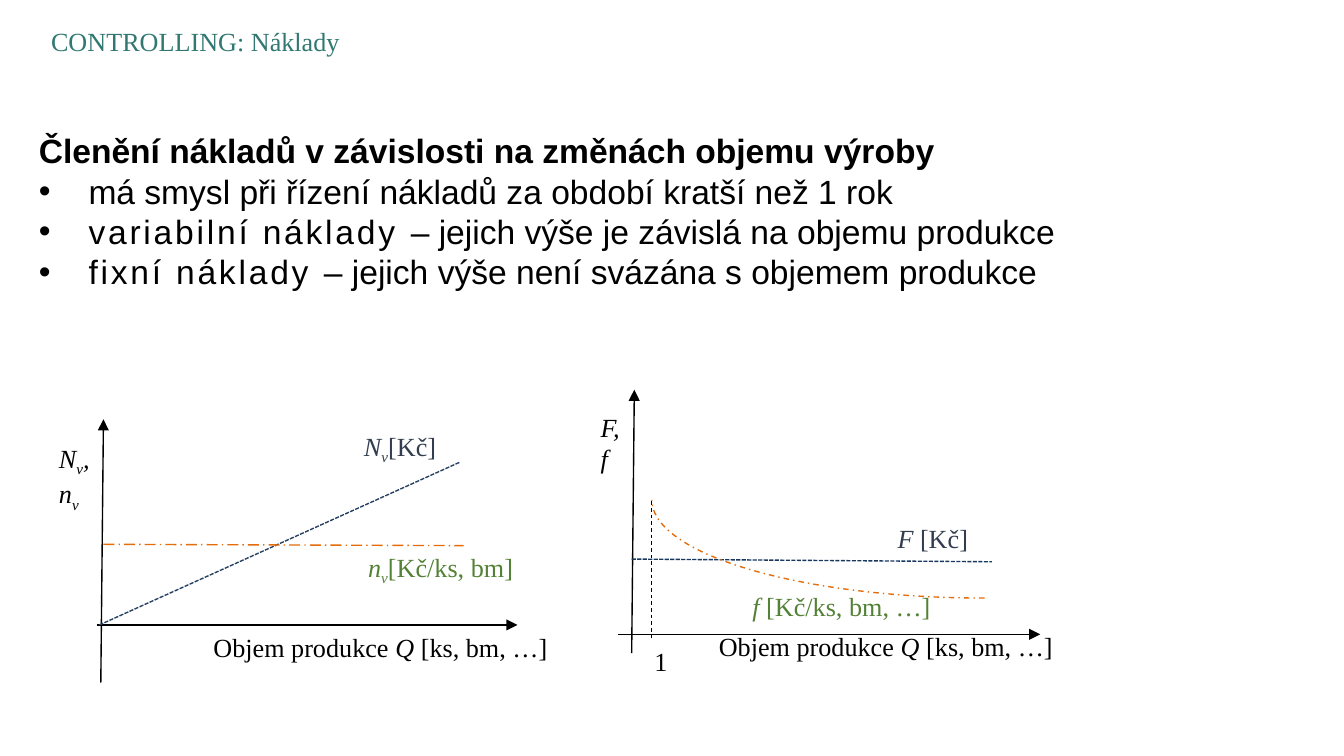
from pptx import Presentation
from pptx.dml.color import RGBColor
from pptx.enum.dml import MSO_LINE
from pptx.enum.shapes import MSO_CONNECTOR, MSO_SHAPE
from pptx.enum.text import MSO_ANCHOR, PP_ALIGN
from pptx.oxml.ns import qn
from pptx.util import Inches, Pt
from lxml.etree import SubElement

WIDE = Inches(10)
HIGH = WIDE * 9 // 16
COL = WIDE / 100  # side of one square grid cell
SERIF, SANS = "Times New Roman", "Arial"
BLACK, TEAL, SLATE, GREEN = "000000", "307871", "323E4F", "538135"
NAVY, BLUE, ORANGE = "254061", "17375E", "E46C0A"
VOLUME = [("Objem produkce", ""), (" Q ", "i"), ("[ks, bm, …]", "")]


def tint(code):
    return RGBColor.from_string(code)


def cells(*nums):
    return [round(n * COL) for n in nums]


def shift(box, x, y):
    return box[0] + x, box[1] + y


def write(para, runs, font=SERIF, size=14, color=BLACK, align=PP_ALIGN.JUSTIFY):
    """Add (text, marks) runs; marks: b bold, i italic, s subscript, w wide."""
    para.alignment = align
    for text, marks in runs:
        run = para.add_run()
        run.text = text
        face = run.font
        face.name, face.size = font, Pt(size)
        face.bold, face.italic = "b" in marks, "i" in marks
        face.color.rgb = tint(color)
        props = run._r.get_or_add_rPr()
        if "s" in marks:
            props.set("baseline", "-25000")
        if "w" in marks:
            props.set("spc", "150")


def label(shapes, spot, size, runs, color=BLACK):
    frame = shapes.add_textbox(*cells(*spot, *size)).text_frame
    frame.word_wrap = True
    write(frame.paragraphs[0], runs, color=color)


def stroke(line, color, width=0.75, dash=None):
    line.color.rgb = tint(color)
    line.width = Pt(width)
    if dash:
        line.dash_style = dash


def rule(shapes, start, end, color=BLACK, width=0.75, dash=None, arrow=False):
    link = shapes.add_connector(MSO_CONNECTOR.STRAIGHT, *cells(*start, *end))
    stroke(link.line, color, width, dash)
    if arrow:
        SubElement(link.line._get_or_add_ln(), qn("a:tailEnd"), type="triangle")
    SubElement(link._element.spPr, qn("a:effectLst"))


def axes(shapes, box, left, right, base, foot):
    """Draw a level axis and a slightly leaning upright one, both with arrows."""
    rule(shapes, shift(box, left, base), shift(box, right, base), arrow=True)
    rule(shapes, shift(box, foot, 19.6), shift(box, foot + 0.2, 0), arrow=True)


def head(slide, box, size):
    title = slide.shapes.title
    title.left, title.top, title.width, title.height = cells(*box, *size)
    frame = title.text_frame
    frame.word_wrap = True
    frame.vertical_anchor = MSO_ANCHOR.TOP
    write(frame.paragraphs[0], [("CONTROLLING: Náklady", "")],
          color=TEAL, align=PP_ALIGN.LEFT)


def points(slide, box, size):
    frame = slide.shapes.add_textbox(*cells(*box, *size)).text_frame
    frame.word_wrap = True
    rows = [
        [("Členění nákladů v závislosti na změnách objemu výroby", "b")],
        [("má smysl při řízení nákladů za období kratší než 1 rok", "")],
        [("variabilní náklady ", "w"),
         ("– jejich výše je závislá na objemu produkce", "")],
        [("fixní náklady ", "w"),
         ("– jejich výše není svázána s objemem produkce", "")],
    ]
    for i, runs in enumerate(rows):
        para = frame.add_paragraph() if i else frame.paragraphs[0]
        para.line_spacing = Pt(21.6)
        if i:
            props = para._p.get_or_add_pPr()
            props.set("marL", str(Inches(0.37)))
            props.set("indent", str(-Inches(0.37)))
            SubElement(props, qn("a:buFont"), typeface=SANS)
            SubElement(props, qn("a:buChar"), char="•")
        write(para, runs, font=SANS, size=18, align=PP_ALIGN.LEFT)


def variable(slide, box):
    """Graph of total and unit variable costs."""
    shapes = slide.shapes.add_group_shape().shapes
    axes(shapes, box, 3.8, 35.1, 15.3, 4.1)
    rule(shapes, shift(box, 4, 15.3), shift(box, 30.8, 3.2), NAVY,
         dash=MSO_LINE.SQUARE_DOT)
    rule(shapes, shift(box, 4.3, 9.3), shift(box, 31.1, 9.4), ORANGE,
         dash=MSO_LINE.LONG_DASH_DOT)
    label(shapes, shift(box, 23, 9.3), (14.2, 4.2),
          [("n", "i"), ("v", "is"), ("[Kč/ks, bm]", "")], GREEN)
    label(shapes, shift(box, 22.7, 0.3), (9.6, 4.2),
          [("N", "i"), ("v", "is"), ("[Kč]", "")], SLATE)
    label(shapes, shift(box, 0, 1.2), (4.6, 7.2),
          [("N", "i"), ("v", "is"), (", n", "i"), ("v", "is")])
    label(shapes, shift(box, 11.5, 15.3), (27.6, 4.2), VOLUME)


def fixed(slide, box):
    """Graph of total and unit fixed costs."""
    shapes = slide.shapes.add_group_shape().shapes
    axes(shapes, box, 2.3, 33.7, 18.2, 3.3)
    rule(shapes, shift(box, 3.3, 12.6), shift(box, 30.1, 12.8), BLUE,
         dash=MSO_LINE.SQUARE_DOT)
    curve = shapes.add_shape(MSO_SHAPE.ARC, *cells(*shift(box, 4.8, 0.9), 49.5, 14.6))
    curve.rotation = 180
    curve.shadow.inherit = False
    curve.fill.background()
    stroke(curve.line, ORANGE, dash=MSO_LINE.DASH_DOT)
    rule(shapes, shift(box, 4.8, 8.3), shift(box, 4.8, 18.6), width=0.5,
         dash=MSO_LINE.DASH)
    label(shapes, shift(box, 22.1, 9.4), (16.4, 4.2),
          [("F ", "i"), ("[Kč]", "")], SLATE)
    label(shapes, shift(box, 0, 1.1), (4.1, 7.2), [("F, f", "i")])
    label(shapes, shift(box, 11.3, 14.4), (22.1, 4.2),
          [("f ", "i"), ("[Kč/ks, bm, …]", "")], GREEN)
    label(shapes, shift(box, 4, 18.5), (4.6, 2.7), [("1", "")])
    label(slide.shapes, shift(box, 8.8, 17.4), (30.2, 4.3), VOLUME)


def main():
    deck = Presentation()
    deck.slide_width, deck.slide_height = WIDE, HIGH
    slide = deck.slides.add_slide(deck.slide_layouts[5])
    head(slide, (2.8, 1.4), (81.9, 5.5))
    points(slide, (1.9, 9.2), (83.5, 16.2))
    variable(slide, (3.4, 31.2))
    fixed(slide, (43.7, 29))
    deck.save("out.pptx")


if __name__ == "__main__":
    main()
